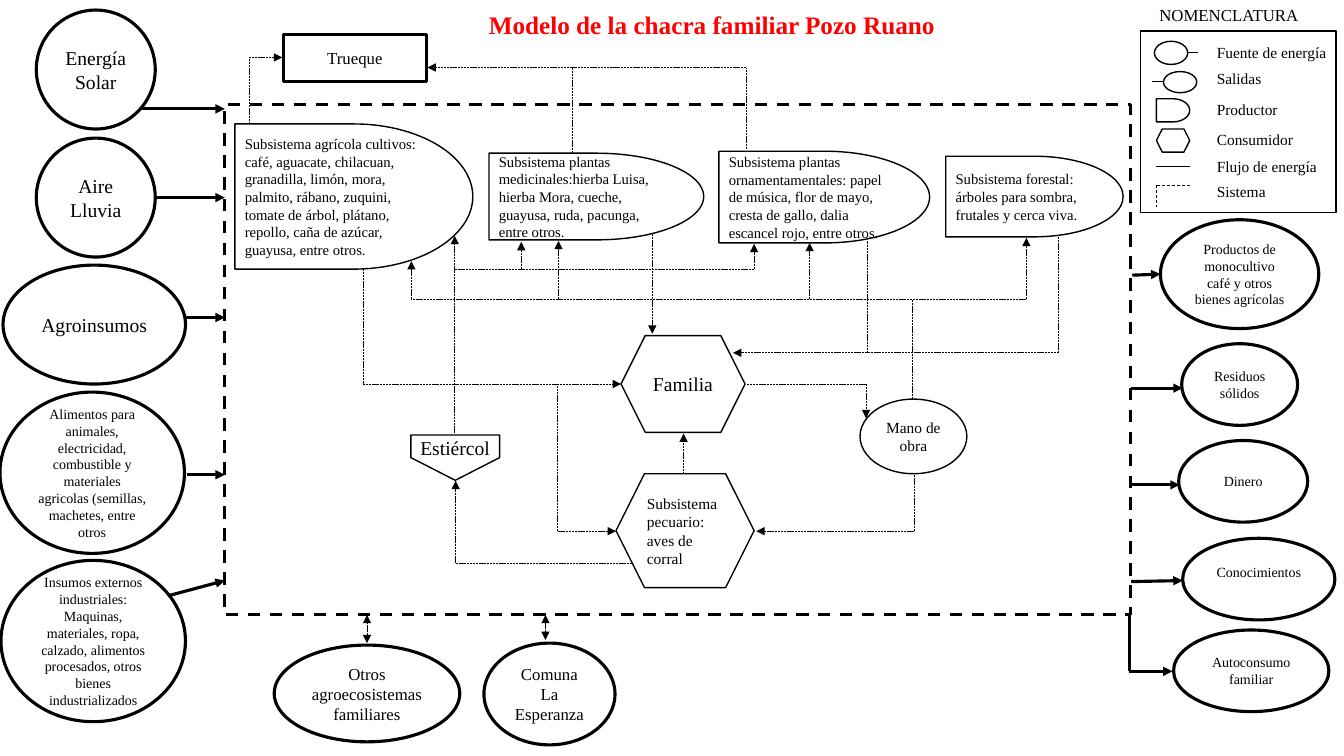
from lxml import etree
from pptx import Presentation
from pptx.dml.color import RGBColor
from pptx.enum.dml import MSO_LINE
from pptx.enum.shapes import MSO_CONNECTOR, MSO_SHAPE
from pptx.enum.text import MSO_ANCHOR, PP_ALIGN
from pptx.oxml.ns import qn
from pptx.util import Inches, Pt

COLORS = {"ink": "000000", "paper": "FFFFFF", "title": "FF0000"}
FONT = "Times New Roman"
THIN, OUTLINE, THICK = 0.5, 1, 2.25


class Diagram:
    def __init__(self, page):
        self.page = page

    def color(self, name):
        return RGBColor.from_string(COLORS[name])

    def add_lines(self, box, lines, size, align=PP_ALIGN.CENTER, color="ink", bold=False):
        for index, line in enumerate(lines):
            para = box.paragraphs[0] if index == 0 else box.add_paragraph()
            para.alignment = align
            span = para.add_run()
            span.text = line
            span.font.name = FONT
            span.font.size = Pt(size)
            span.font.bold = bold
            span.font.color.rgb = self.color(color)

    def shape(self, kind, place, lines=(), size=10, width=OUTLINE,
              align=PP_ALIGN.CENTER, filled=True, dash=None, lift=0.05):
        """Draw a preset shape; lift is the bottom inset of its text."""
        shape = self.page.shapes.add_shape(kind, *[Inches(value) for value in place])
        shape.shadow.inherit = False
        if filled:
            shape.fill.solid()
            shape.fill.fore_color.rgb = self.color("paper")
        else:
            shape.fill.background()
        if width:
            shape.line.color.rgb = self.color("ink")
            shape.line.width = Pt(width)
            if dash:
                shape.line.dash_style = dash
        else:
            shape.line.fill.background()
        box = shape.text_frame
        box.word_wrap = True
        box.vertical_anchor = MSO_ANCHOR.MIDDLE
        box.margin_bottom = Inches(lift)
        self.add_lines(box, lines, size, align)
        return shape

    def text(self, place, line, size, color="ink", bold=False, wrap=False):
        box = self.page.shapes.add_textbox(*[Inches(value) for value in place]).text_frame
        box.word_wrap = wrap
        self.add_lines(box, [line], size, PP_ALIGN.LEFT, color, bold)

    def segment(self, start, end, width=THIN, dash=None, heads=()):
        line = self.page.shapes.add_connector(
            MSO_CONNECTOR.STRAIGHT, *[Inches(value) for value in (*start, *end)])
        line.line.color.rgb = self.color("ink")
        line.line.width = Pt(width)
        if dash:
            line.line.dash_style = dash
        properties = line._element.spPr
        outline = properties.find(qn("a:ln"))
        for head in heads:
            etree.SubElement(outline, qn(head)).set("type", "triangle")
        etree.SubElement(properties, qn("a:effectLst"))

    def route(self, points, width=THIN, dash=MSO_LINE.SQUARE_DOT, heads=("a:tailEnd",)):
        """Join points with straight segments; the last one carries the arrowheads."""
        last = len(points) - 2
        for index, (start, end) in enumerate(zip(points, points[1:])):
            self.segment(start, end, width, dash, heads if index == last else ())


def draw_subsystems(diagram):
    crops = [
        ((2.33, 1.23, 2.36, 1.44), "Subsistema agrícola cultivos: café, aguacate, chilacuan, "
         "granadilla, limón, mora, palmito, rábano, zuquini, tomate de árbol, plátano, "
         "repollo, caña de azúcar, guayusa, entre otros."),
        ((4.85, 1.52, 2.13, 0.86), "Subsistema plantas medicinales:hierba Luisa, hierba Mora, "
         "cueche, guayusa, ruda, pacunga, entre otros."),
        ((7.13, 1.5, 2.09, 0.91), "Subsistema plantas ornamentamentales: papel de música, "
         "flor de mayo, cresta de gallo, dalia escancel rojo, entre otros."),
        ((9.38, 1.55, 1.76, 0.8), "Subsistema forestal: árboles para sombra, frutales y "
         "cerca viva."),
    ]
    for place, words in crops:
        diagram.shape(MSO_SHAPE.FLOWCHART_DELAY, place, [words], 10.5, align=PP_ALIGN.LEFT)
    diagram.shape(MSO_SHAPE.RECTANGLE, (2.23, 1.04, 8.98, 5.06), width=THICK,
                  filled=False, dash=MSO_LINE.DASH)
    diagram.shape(MSO_SHAPE.HEXAGON, (6.16, 3.33, 1.23, 0.96), ["Familia"], 14)
    diagram.shape(MSO_SHAPE.HEXAGON, (6.11, 4.7, 1.37, 1.13),
                  ["Subsistema pecuario: aves de corral"], 11, align=PP_ALIGN.LEFT)
    diagram.shape(MSO_SHAPE.OVAL, (8.53, 3.96, 1.06, 0.74), ["Mano de obra"], 11)
    manure = diagram.shape(MSO_SHAPE.PENTAGON, (4.29, 4.1, 0.45, 0.88))
    manure.rotation = 90
    diagram.text((4.07, 4.28, 0.9, 0.34), "Estiércol", 14)
    diagram.shape(MSO_SHAPE.RECTANGLE, (2.81, 0.34, 1.42, 0.47), ["Trueque"], 12, THICK)


def draw_flows(diagram):
    arrows = [
        [(10.18, 2.97), (4.08, 2.97), (4.08, 2.59)],
        [(5.54, 2.97), (5.54, 2.39)],
        [(8.03, 2.97), (8.03, 2.41)],
        [(10.18, 2.97), (10.18, 2.36)],
        [(7.41, 3.81), (8.59, 3.81), (8.59, 4.15)],
        [(6.78, 4.7), (6.78, 4.3)],
        [(3.6, 2.67), (3.6, 3.81), (6.16, 3.81)],
        [(4.51, 4.3), (4.51, 2.34)],
        [(4.51, 2.67), (7.48, 2.67), (7.48, 2.42)],
        [(5.17, 2.67), (5.17, 2.4)],
        [(5.53, 3.83), (5.53, 5.27), (6.11, 5.27)],
        [(6.47, 2.32), (6.47, 3.31)],
        [(10.5, 2.35), (10.5, 3.5), (7.27, 3.5)],
        [(2.47, 1.23), (2.47, 0.57), (2.8, 0.57)],
        [(7.4, 1.48), (7.4, 0.67), (4.24, 0.67)],
        [(9.07, 4.71), (9.07, 5.27), (7.5, 5.27)],
        [(6.27, 5.59), (4.52, 5.59), (4.52, 4.77)],
    ]
    for points in arrows:
        diagram.route(points)
    for points in ([(9.05, 3.96), (9.05, 2.97)], [(8.6, 3.5), (8.6, 2.39)],
                   [(5.68, 1.52), (5.68, 0.67)]):
        diagram.route(points, heads=())
    for x, bottom in ((5.41, 6.35), (3.64, 6.38)):
        diagram.route([(x, bottom), (x, 6.1)], heads=("a:headEnd", "a:tailEnd"))


def draw_surroundings(diagram):
    ovals = [
        ((0.36, 0.1, 1.18, 1.18), ["Energía", "Solar"], 14),
        ((0.36, 1.37, 1.18, 1.18), ["Aire", "Lluvia"], 14),
        ((0.03, 2.63, 1.81, 1.18), ["Agroinsumos"], 14),
        ((0, 3.89, 1.83, 1.6), ["Alimentos para animales, electricidad, combustible y "
                               "materiales agricolas (semillas, machetes, entre otros"], 10),
        ((0.01, 5.56, 1.83, 1.6), ["Insumos externos industriales:",
                                  "Maquinas, materiales, ropa, calzado, alimentos "
                                  "procesados, otros bienes industrializados"], 10),
        ((2.72, 6.4, 1.84, 0.96), ["Otros agroecosistemas familiares"], 12),
        ((4.8, 6.38, 1.3, 1.01), ["Comuna La Esperanza"], 12),
        ((11.51, 2.18, 1.57, 1.08),
         ["Productos de monocultivo café y otros bienes agrícolas"], 10),
        ((11.72, 3.41, 1.15, 0.81), ["Residuos sólidos"], 10),
        ((11.69, 4.37, 1.28, 0.81), ["Dinero"], 10),
        ((11.64, 6.25, 1.54, 0.81), ["Autoconsumo familiar"], 10),
    ]
    for place, lines, size in ovals:
        diagram.shape(MSO_SHAPE.OVAL, place, lines, size, THICK)
    diagram.shape(MSO_SHAPE.OVAL, (11.73, 5.34, 1.51, 0.81), ["Conocimientos"], 10,
                  THICK, lift=0.2)
    exchanges = [
        [(1.41, 1.08), (2.23, 1.08)], [(1.54, 1.96), (2.23, 1.96)],
        [(1.84, 3.15), (2.23, 3.15)], [(1.85, 4.71), (2.23, 4.71)],
        [(1.67, 5.91), (2.23, 5.76)], [(11.23, 2.73), (11.51, 2.72)],
        [(11.22, 3.85), (11.73, 3.85)], [(11.2, 4.81), (11.7, 4.81)],
        [(11.22, 5.77), (11.73, 5.76)], [(11.2, 6.11), (11.2, 6.66), (11.63, 6.66)],
    ]
    for points in exchanges:
        diagram.route(points, THICK, dash=None)


def draw_legend(diagram):
    diagram.text((11.4, 0, 1.59, 0.3), "NOMENCLATURA", 12)
    labels = [("Fuente de energía", 0.52), ("Salidas", 0.78), ("Productor", 1.09),
              ("Consumidor", 1.38), ("Flujo de energía", 1.65), ("Sistema", 1.9)]
    for label, middle in labels:
        diagram.shape(MSO_SHAPE.RECTANGLE, (11.97, middle - 0.1, 1.36, 0.2), [label], 11,
                      width=0, align=PP_ALIGN.LEFT)
    for kind, place in ((MSO_SHAPE.OVAL, (11.45, 0.41, 0.33, 0.23)),
                        (MSO_SHAPE.OVAL, (11.54, 0.71, 0.33, 0.21)),
                        (MSO_SHAPE.FLOWCHART_DELAY, (11.47, 0.98, 0.33, 0.23)),
                        (MSO_SHAPE.HEXAGON, (11.47, 1.28, 0.33, 0.23))):
        diagram.shape(kind, place)
    for start, end in (((11.78, 0.52), (11.88, 0.52)), ((11.43, 0.81), (11.53, 0.81)),
                       ((11.47, 1.65), (11.8, 1.65))):
        diagram.segment(start, end)
    diagram.route([(11.8, 1.84), (11.47, 1.84), (11.47, 2.05)], dash=MSO_LINE.DASH, heads=())
    diagram.shape(MSO_SHAPE.RECTANGLE, (11.31, 0.31, 1.94, 1.8), filled=False)


def main():
    deck = Presentation()
    deck.slide_width, deck.slide_height = Inches(13.33), Inches(7.5)
    diagram = Diagram(deck.slides.add_slide(deck.slide_layouts[6]))
    draw_subsystems(diagram)
    draw_flows(diagram)
    draw_surroundings(diagram)
    draw_legend(diagram)
    diagram.text((4.75, 0.04, 5.34, 0.4), "Modelo de la chacra familiar Pozo Ruano", 18,
                 "title", bold=True, wrap=True)
    deck.save("out.pptx")


if __name__ == "__main__":
    main()
